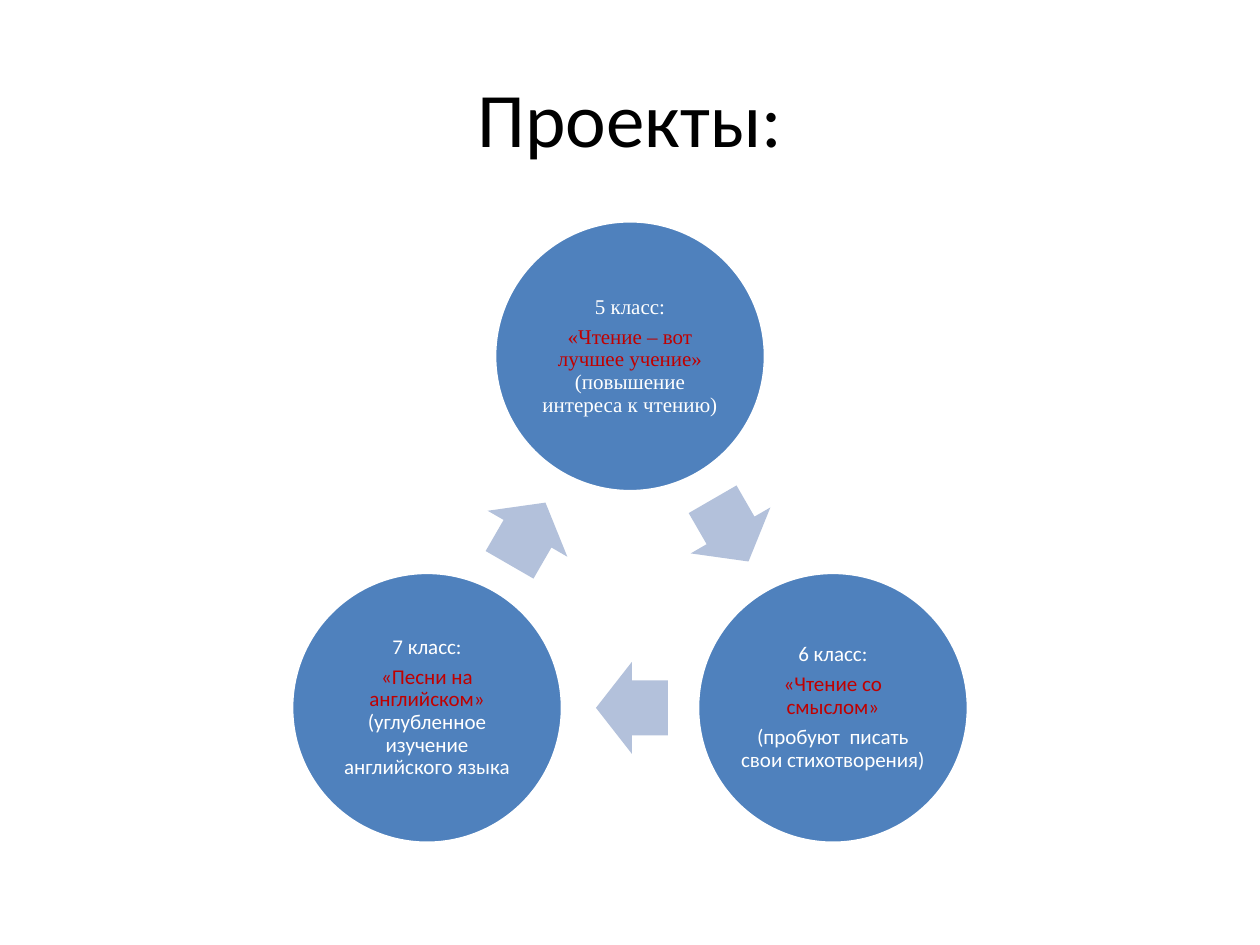
import math
from dataclasses import dataclass

import pptx
import pptx.dml.color
import pptx.enum.shapes
import pptx.enum.text
import pptx.shapes.shapetree
import pptx.slide
import pptx.util

RGBColor = pptx.dml.color.RGBColor
Shape = pptx.enum.shapes.MSO_SHAPE
Align = pptx.enum.text.PP_ALIGN
Anchor = pptx.enum.text.MSO_ANCHOR
Inches = pptx.util.Inches
Pt = pptx.util.Pt

BLACK = RGBColor(0x00, 0x00, 0x00)
WHITE = RGBColor(0xFF, 0xFF, 0xFF)
RED = RGBColor(0xC0, 0x00, 0x00)
BLUE = RGBColor(0x4F, 0x81, 0xBD)
PALE_BLUE = RGBColor(0xB3, 0xC1, 0xDB)

WIDTH, HEIGHT = 10, 7.5
CENTER_X, CENTER_Y = WIDTH * 0.5, HEIGHT * 0.625
RING_RADIUS = HEIGHT * 0.248
DIAMETER = WIDTH * 0.215
ARROW_LENGTH, ARROW_BREADTH = WIDTH * 0.057, WIDTH * 0.073
ARROW_SETBACK = 0.015


@dataclass(frozen=True)
class Span:
    text: str
    color: RGBColor = WHITE


@dataclass(frozen=True)
class Project:
    font: str
    paragraphs: tuple[tuple[Span, ...], ...]


PROJECTS = (
    Project("Times New Roman", (
        (Span("5 класс:"),),
        (Span("«Чтение – вот лучшее учение» ", RED), Span("(повышение интереса к чтению)")),
    )),
    Project("Calibri", (
        (Span("6 класс:"),),
        (Span("«Чтение со смыслом»", RED),),
        (Span("(пробуют  писать свои стихотворения)"),),
    )),
    Project("Calibri", (
        (Span("7 класс:"),),
        (Span("«Песни на английском» ", RED), Span("(углубленное изучение английского языка")),
    )),
)


def ring_point(index: int) -> tuple[float, float]:
    """Centre of a circle, counted clockwise from the top of the ring."""
    angle = math.tau * index / len(PROJECTS)
    return (CENTER_X + RING_RADIUS * math.sin(angle),
            CENTER_Y - RING_RADIUS * math.cos(angle))


def add_centered(shapes: pptx.shapes.shapetree.GroupShapes, kind: Shape,
                 center: tuple[float, float], width: float, height: float,
                 color: RGBColor):
    shape = shapes.add_shape(kind, Inches(center[0] - width / 2), Inches(center[1] - height / 2),
                             Inches(width), Inches(height))
    shape.shadow.inherit = False
    shape.fill.solid()
    shape.fill.fore_color.rgb = color
    return shape


def add_project(shapes: pptx.shapes.shapetree.GroupShapes, index: int, project: Project) -> None:
    circle = add_centered(shapes, Shape.OVAL, ring_point(index), DIAMETER, DIAMETER, BLUE)
    circle.line.color.rgb = WHITE
    circle.line.width = Pt(2)
    frame = circle.text_frame
    frame.word_wrap = True
    frame.vertical_anchor = Anchor.MIDDLE
    frame.margin_left = frame.margin_right = Inches(0.02)
    frame.margin_top = frame.margin_bottom = Inches(0.02)
    for number, spans in enumerate(project.paragraphs):
        para = frame.add_paragraph() if number else frame.paragraphs[0]
        para.alignment = Align.CENTER
        para.line_spacing = 0.9
        para.space_after = Pt(4.2)
        para.font.name = project.font
        para.font.size = Pt(12)
        for span in spans:
            run = para.add_run()
            run.text = span.text
            run.font.color.rgb = span.color


def add_arrow(shapes: pptx.shapes.shapetree.GroupShapes, index: int) -> None:
    """Arrow from one circle to the next, set back a little from the midpoint."""
    (start_x, start_y), (end_x, end_y) = ring_point(index), ring_point(index + 1)
    angle = math.atan2(end_y - start_y, end_x - start_x)
    center = ((start_x + end_x) / 2 - ARROW_SETBACK * math.cos(angle),
              (start_y + end_y) / 2 - ARROW_SETBACK * math.sin(angle))
    arrow = add_centered(shapes, Shape.RIGHT_ARROW, center,
                         ARROW_LENGTH, ARROW_BREADTH, PALE_BLUE)
    arrow.line.fill.background()
    arrow.adjustments[0] = 0.6
    arrow.adjustments[1] = 0.5
    arrow.rotation = round(math.degrees(angle)) % 360


def set_title(page: pptx.slide.Slide, text: str) -> None:
    title = page.shapes.title
    title.left, title.top = Inches(WIDTH * 0.05), Inches(HEIGHT * 0.04)
    title.width, title.height = Inches(WIDTH * 0.9), Inches(HEIGHT / 6)
    title.text_frame.text = text
    title.text_frame.vertical_anchor = Anchor.MIDDLE
    para = title.text_frame.paragraphs[0]
    para.alignment = Align.CENTER
    para.font.name = "Calibri"
    para.font.size = Pt(44)
    para.font.color.rgb = BLACK


def main() -> None:
    deck = pptx.Presentation()
    deck.slide_width, deck.slide_height = Inches(WIDTH), Inches(HEIGHT)
    page = deck.slides.add_slide(deck.slide_layouts.get_by_name("Title Only"))
    set_title(page, "Проекты:")
    cycle = page.shapes.add_group_shape().shapes
    for index, project in enumerate(PROJECTS):
        add_project(cycle, index, project)
        add_arrow(cycle, index)
    deck.save("out.pptx")


if __name__ == "__main__":
    main()
